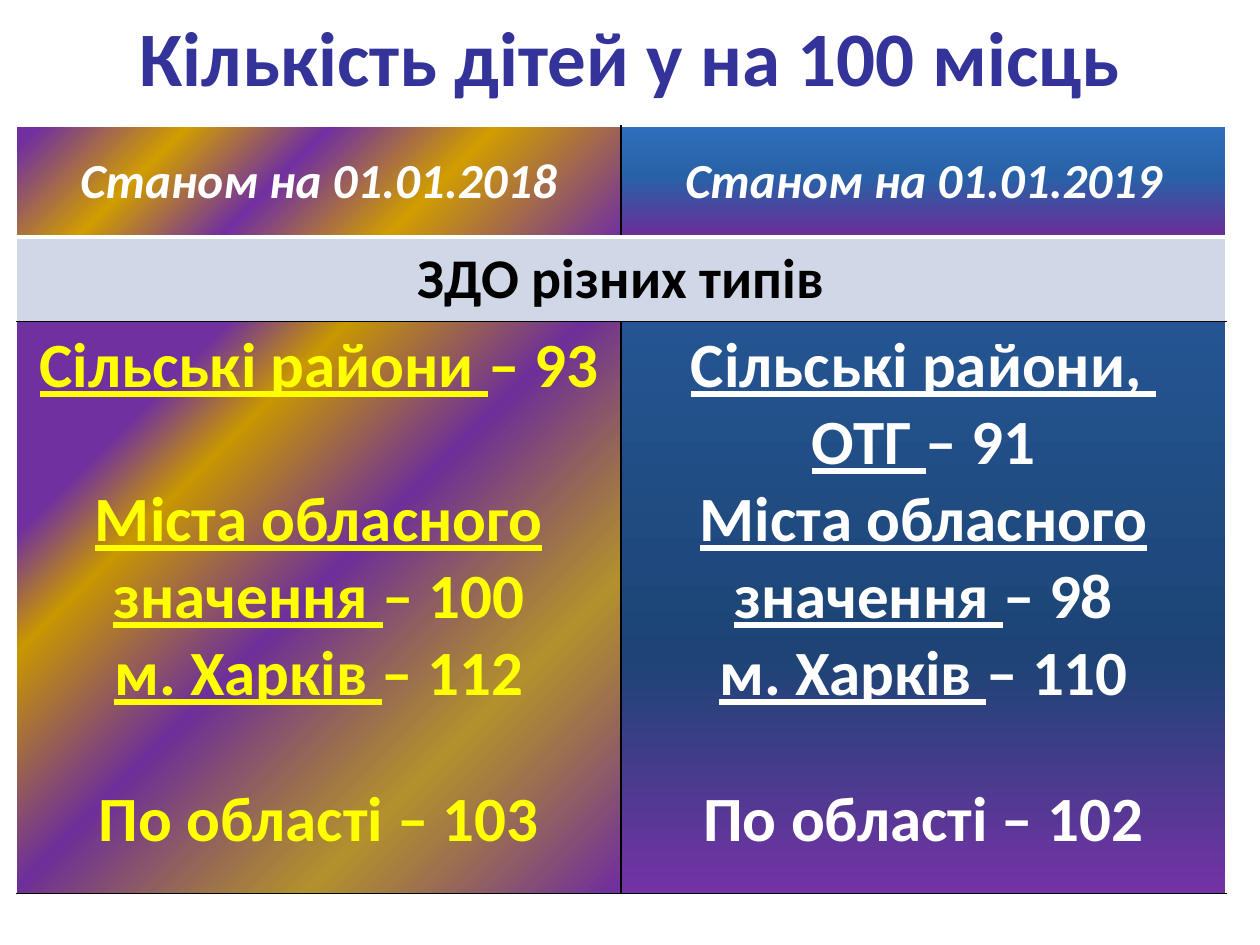
from lxml.etree import SubElement
from pptx import Presentation
from pptx.dml.color import RGBColor
from pptx.enum.text import MSO_ANCHOR as Anchor, PP_ALIGN as Align
from pptx.oxml.ns import qn
from pptx.util import Inches, Pt

FONT = "Calibri"
WHITE, BLACK, YELLOW, INDIGO = "FFFFFF", "000000", "FFFF00", "333399"
THIN_WHITE, THICK_WHITE, THIN_BLACK = (WHITE, 1), (WHITE, 3), (BLACK, 1)
ROW_HEIGHTS = (0.88, 0.67, 4.54)
COLUMN_WIDTH = 4.8
# Gaps as tall as one line of 36 pt or 32 pt text
WIDE_GAP, GAP = 44, 39

# Stops are (position, colour) or (position, colour, opacity), in percent
HEADER_GRADIENTS = (
    [(0, "7030A0"), (33, "D19D00"), (56, "7030A0"), (76, "D19D00"), (97, "7030A0")],
    [(0, "2F6EBD"), (46, "2961A7"), (100, "6A2D97")],
)
BODY_GRADIENTS = (
    [(1, "7030A0"), (27, "A37B00", 82), (52, "6D2F9B"), (72, "C99800"), (82, "7030A0")],
    [(0, "245592"), (59, "1D4475"), (100, "7432A5")],
)
HEADERS = ("Станом на 01.01.2018", "Станом на 01.01.2019")
BODY_COLORS = (YELLOW, WHITE)
# Lines are (underlined label, plain text, space before in points)
BODY_LINES = (
    [
        ("Сільські райони ", "– 93", 0),
        ("Міста обласного значення ", "– 100", WIDE_GAP),
        ("м. Харків ", "– 112", 0),
        ("", "По області – 103", GAP),
    ],
    [
        ("Сільські райони, ", "", 0),
        ("ОТГ ", "– 91", 0),
        ("Міста обласного значення ", "– 98", 0),
        ("м. Харків ", "– 110", 0),
        ("", "По області – 102", GAP),
    ],
)


def rgb(value):
    return RGBColor.from_string(value)


def add_span(para, text, size, color, italic=False, underline=False):
    span = para.add_run()
    span.text = text
    font = span.font
    font.name, font.size, font.bold = FONT, Pt(size), True
    font.italic, font.underline = italic, underline
    font.color.rgb = rgb(color)


def write_line(frame, text, size, color, italic=False):
    para = frame.paragraphs[0]
    para.alignment = Align.CENTER
    add_span(para, text, size, color, italic)


def write_figures(frame, lines, color):
    for index, (label, text, gap) in enumerate(lines):
        para = frame.add_paragraph() if index else frame.paragraphs[0]
        para.alignment = Align.CENTER
        if gap:
            para.space_before = Pt(gap)
        if label:
            add_span(para, label, 36, color, underline=True)
        if text:
            add_span(para, text, 36, color)


def set_borders(cell, left, right, top, bottom):
    """Give each side as (colour, width in points); call before filling."""
    props = cell._tc.get_or_add_tcPr()
    for side, (color, width) in zip("LRTB", (left, right, top, bottom)):
        line = SubElement(props, qn(f"a:ln{side}"), w=str(Pt(width)))
        solid = SubElement(line, qn("a:solidFill"))
        SubElement(solid, qn("a:srgbClr"), val=color)


def fill_gradient(cell, stops, radial):
    """Fill downwards, or in circles around the lower right corner."""
    gradient = SubElement(cell._tc.get_or_add_tcPr(), qn("a:gradFill"), rotWithShape="1")
    stop_list = SubElement(gradient, qn("a:gsLst"))
    for position, color, *opacity in stops:
        stop = SubElement(stop_list, qn("a:gs"), pos=str(position * 1000))
        node = SubElement(stop, qn("a:srgbClr"), val=color)
        for percent in opacity:
            SubElement(node, qn("a:alpha"), val=str(percent * 1000))
    if radial:
        path = SubElement(gradient, qn("a:path"), path="circle")
        SubElement(path, qn("a:fillToRect"), l="100000", t="100000")
    else:
        SubElement(gradient, qn("a:lin"), ang="5400000", scaled="0")


def add_title(page):
    title = page.shapes.title
    title.left, title.top = Inches(0.2), Inches(0.13)
    title.width, title.height = Inches(9.61), Inches(0.62)
    title.text_frame.vertical_anchor = Anchor.MIDDLE
    write_line(title.text_frame, "Кількість дітей у на 100 місць", 44, INDIGO)


def add_grid(page):
    table = page.shapes.add_table(
        3, 2, Inches(0.13), Inches(1), Inches(2 * COLUMN_WIDTH), Inches(sum(ROW_HEIGHTS))
    ).table
    table.first_row = table.horz_banding = False
    for row, height in zip(table.rows, ROW_HEIGHTS):
        row.height = Inches(height)
    for column in table.columns:
        column.width = Inches(COLUMN_WIDTH)
    return table


def fill_columns(table):
    for index in range(2):
        header, band, body = (table.cell(row, index) for row in range(3))
        sides = (THIN_BLACK, THIN_WHITE) if index else (THIN_WHITE, THIN_BLACK)
        set_borders(header, *sides, THIN_WHITE, THICK_WHITE)
        set_borders(band, THIN_WHITE, THIN_WHITE, THICK_WHITE, THIN_BLACK)
        set_borders(body, *sides, THIN_BLACK, THIN_BLACK)
        fill_gradient(header, HEADER_GRADIENTS[index], radial=index == 0)
        fill_gradient(body, BODY_GRADIENTS[index], radial=index == 0)
        header.vertical_anchor = Anchor.MIDDLE
        write_line(header.text_frame, HEADERS[index], 28, WHITE, italic=True)
        write_figures(body.text_frame, BODY_LINES[index], BODY_COLORS[index])


def fill_band(table):
    band = table.cell(1, 0)
    band.merge(table.cell(1, 1))
    band.fill.solid()
    band.fill.fore_color.rgb = rgb("D0D8E8")
    band.vertical_anchor = Anchor.MIDDLE
    write_line(band.text_frame, "ЗДО різних типів", 32, BLACK)


def main():
    deck = Presentation()
    deck.slide_width, deck.slide_height = Inches(10), Inches(7.5)
    page = deck.slides.add_slide(deck.slide_layouts[5])
    add_title(page)
    table = add_grid(page)
    fill_columns(table)
    fill_band(table)
    deck.save("out.pptx")


if __name__ == "__main__":
    main()
